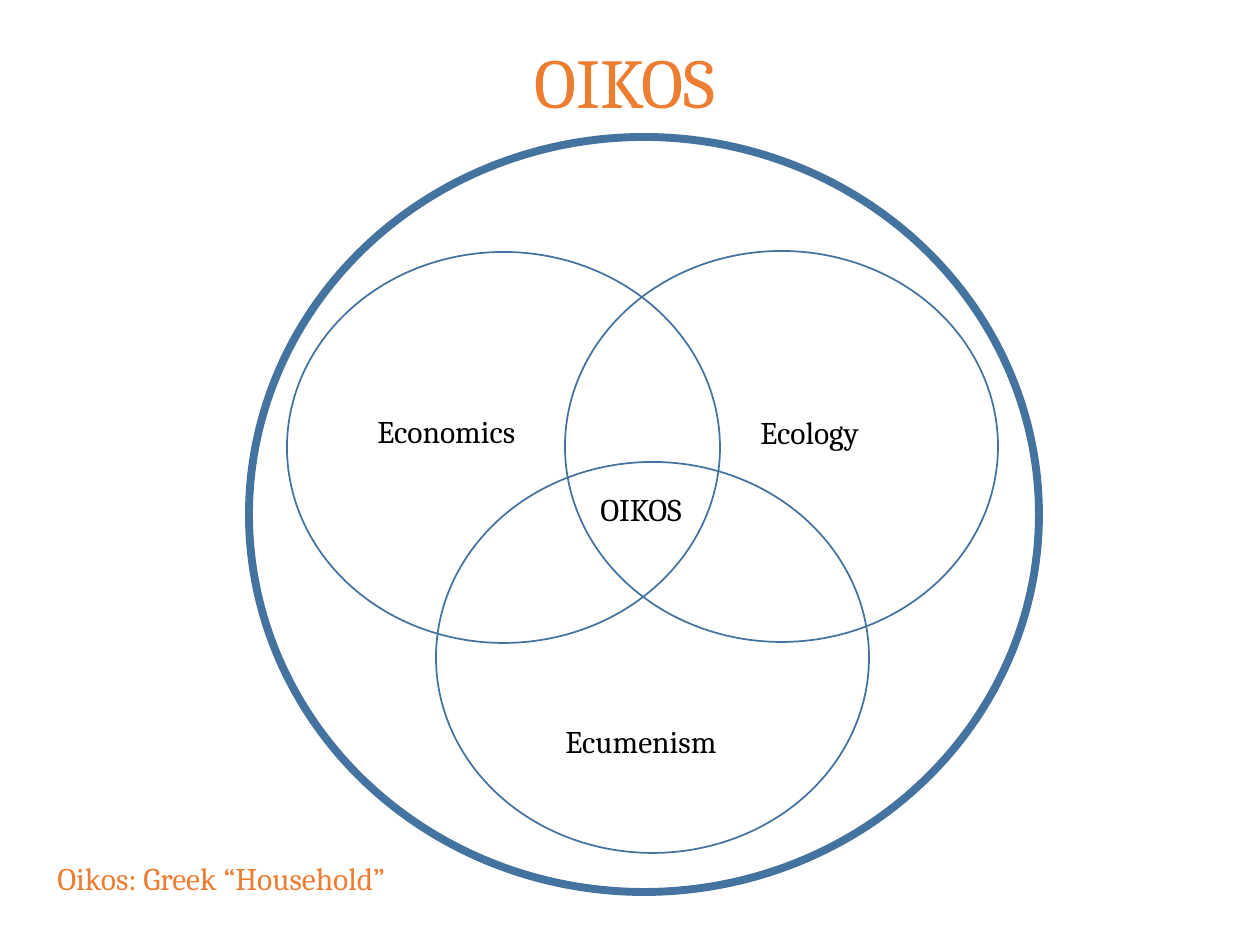
from pptx import Presentation
from pptx.dml.color import RGBColor
from pptx.enum.shapes import MSO_SHAPE as Shape
from pptx.enum.text import MSO_AUTO_SIZE as AutoSize
from pptx.util import Pt

PX = 914400 // 126  # EMU per pixel
FONT = "Cambria"
BLUE = RGBColor(0x43, 0x73, 0x9E)
ORANGE = RGBColor(0xED, 0x7D, 0x31)
BLACK = RGBColor(0, 0, 0)

# Circles: left, top, width, height, line width in points
SET_SIZE = (433, 391)
CIRCLES = [
    (249, 137, 790, 755, 4.5),  # household around the three sets
    (287, 252, *SET_SIZE, 1),   # economics
    (436, 462, *SET_SIZE, 1),   # ecumenism
    (565, 251, *SET_SIZE, 1),   # ecology
]

# Labels: text, left, top, width, height, size in points, colour
LABELS = [
    ("OIKOS", 522, 32, 217, 97, 40, ORANGE),
    ("Economics", 365, 406, 171, 50, 18, BLACK),
    ("Ecumenism", 553, 716, 184, 50, 18, BLACK),
    ("Ecology", 748, 407, 131, 50, 18, BLACK),
    ("OIKOS", 588, 484, 112, 50, 18, BLACK),
    ("Oikos: Greek “Household”", 45, 853, 374, 50, 18, ORANGE),
]


def emu(*lengths):
    return [length * PX for length in lengths]


deck = Presentation()
deck.slide_width, deck.slide_height = emu(1260, 945)
page = deck.slides.add_slide(deck.slide_layouts[6])

# Overlapping outlines
for *bounds, weight in CIRCLES:
    circle = page.shapes.add_shape(Shape.OVAL, *emu(*bounds))
    circle.shadow.inherit = False
    circle.fill.background()
    circle.line.color.rgb = BLUE
    circle.line.width = Pt(weight)

# Title, set names and footnote
for text, *bounds, size, colour in LABELS:
    box = page.shapes.add_textbox(*emu(*bounds))
    frame = box.text_frame
    frame.word_wrap = False
    frame.auto_size = AutoSize.SHAPE_TO_FIT_TEXT
    para = frame.paragraphs[0]
    para.text = text
    para.font.name = FONT
    para.font.size = Pt(size)
    para.font.color.rgb = colour

deck.save("out.pptx")
